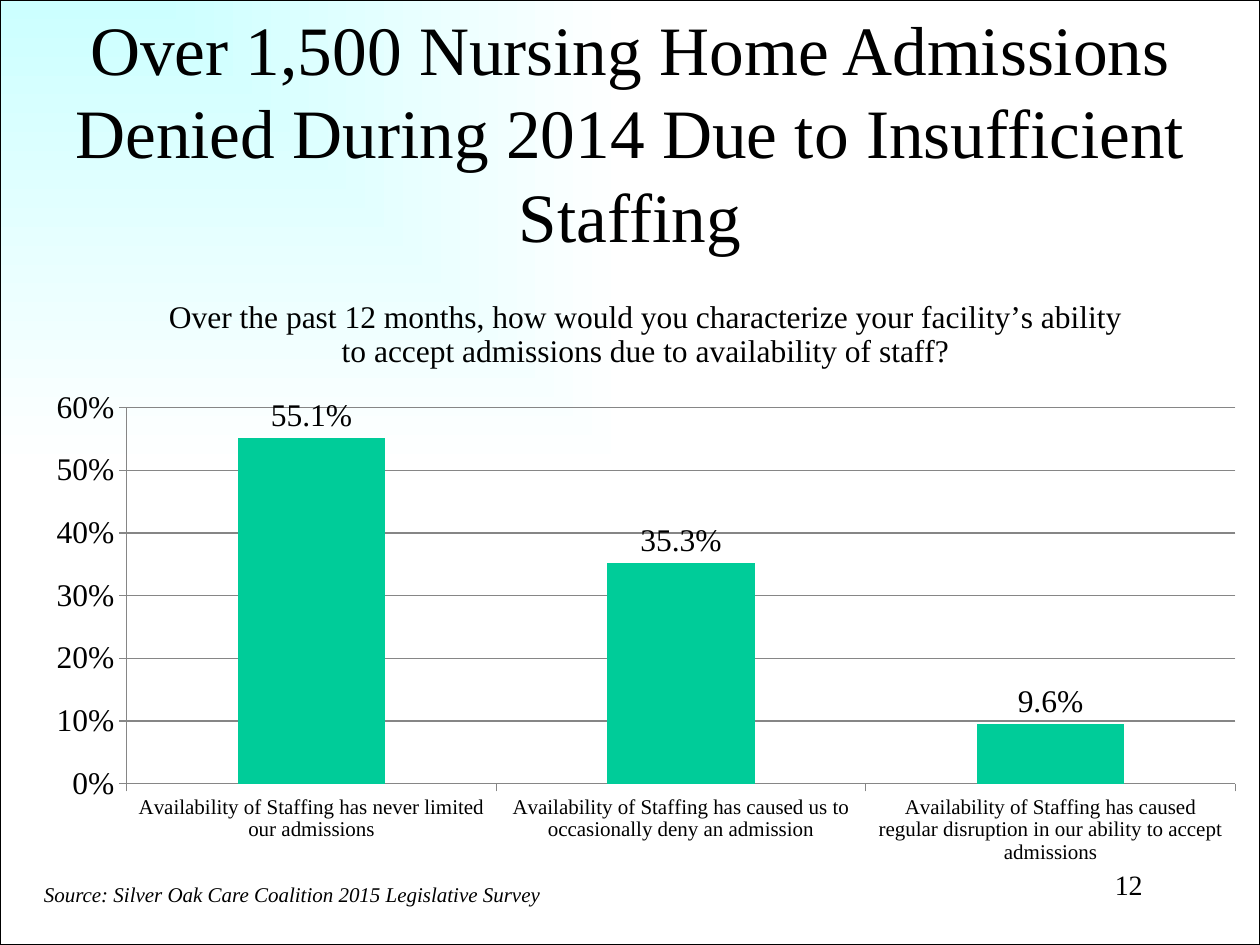
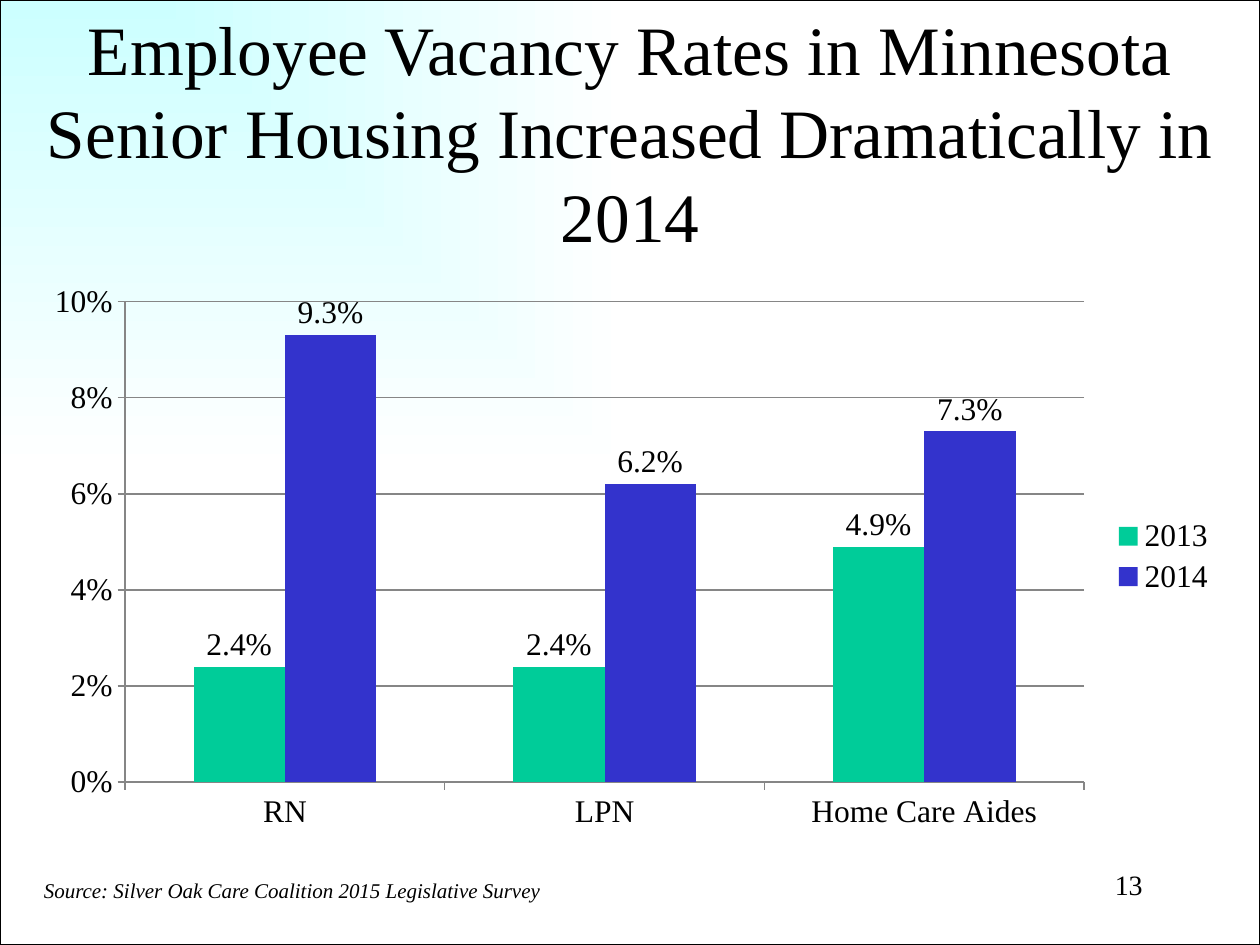
from lxml.etree import SubElement
from pptx import Presentation
from pptx.chart.data import CategoryChartData
from pptx.dml.color import RGBColor
from pptx.enum.chart import XL_CHART_TYPE, XL_LABEL_POSITION, XL_LEGEND_POSITION, XL_TICK_MARK
from pptx.enum.shapes import MSO_SHAPE
from pptx.enum.text import MSO_ANCHOR, MSO_AUTO_SIZE, PP_ALIGN
from pptx.oxml.ns import qn
from pptx.util import Pt

WIDTH, HEIGHT = 720, 540
FONT = "Times New Roman"
COLORS = {
    "text": "000000",
    "glow": "CCFFFF",
    "page": "FFFFFF",
    "grid": "868686",
    "green": "00CC99",
    "blue": "3333CC",
}
SOURCE = "Source: Silver Oak Care Coalition 2015 Legislative Survey"

# Boxes are left, top, width, height in points
TITLE_BOX = (18, 30, 684, 90)
NUMBER_BOX = (624, 492, 42, 24)

SLIDES = [
    {
        "title": "Over 1,500 Nursing Home Admissions Denied During 2014 "
                 "Due to Insufficient Staffing",
        "number": "12",
        "source_box": (18, 500, 308, 21.6),
        "chart_box": (18, 156, 702, 344),
        "plot_box": (54.5, 77, 633.5, 215),
        "question": "Over the past 12 months, how would you characterize your facility’s "
                    "ability to accept admissions due to availability of staff?",
        "categories": [
            "Availability of Staffing has never limited our admissions",
            "Availability of Staffing has caused us to occasionally deny an admission",
            "Availability of Staffing has caused regular disruption in our ability "
            "to accept admissions",
        ],
        "series": [("Series 1", (0.551, 0.353, 0.096), "green")],
        "category_size": 12,
        "scale": (0.6, 0.1),
    },
    {
        "title": "Employee Vacancy Rates in Minnesota Senior Housing "
                 "Increased Dramatically in 2014",
        "number": "13",
        "source_box": (18, 498, 319, 21.6),
        "chart_box": (18, 156, 684, 324),
        "plot_box": (53.5, 16.5, 548, 274.5),
        "question": None,
        "categories": ["RN", "LPN", "Home Care Aides"],
        "series": [
            ("2013", (0.024, 0.024, 0.049), "green"),
            ("2014", (0.093, 0.062, 0.073), "blue"),
        ],
        "category_size": 18,
        "scale": (0.1, 0.02),
    },
]


def color(name):
    return RGBColor.from_string(COLORS[name])


def points(box):
    return [Pt(length) for length in box]


def style_font(font, size, italic=False):
    font.name = FONT
    font.size = Pt(size)
    font.bold = False
    font.italic = italic
    font.color.rgb = color("text")


def add_backdrop(slide):
    """Draw the corner glow and hand it to the layout that the slides share."""
    shape = slide.shapes.add_shape(MSO_SHAPE.RECTANGLE, *points((0, 0, WIDTH, HEIGHT)))
    shape.shadow.inherit = False
    shape.line.color.rgb = color("text")
    shape.line.width = Pt(0.75)
    shape.fill.gradient()
    for stop, name in zip(shape.fill.gradient_stops, ("glow", "page")):
        stop.color.rgb = color(name)
    # Spread the gradient from the top left corner
    gradient = shape._element.spPr.find(qn("a:gradFill"))
    gradient.remove(gradient.find(qn("a:lin")))
    spread = SubElement(gradient, qn("a:path"), {"path": "rect"})
    SubElement(spread, qn("a:fillToRect"), {"r": "100000", "b": "100000"})
    slide.slide_layout.shapes._spTree.insert(2, shape._element)


def place_title(slide, box, text):
    title = slide.shapes.title
    title.left, title.top, title.width, title.height = points(box)
    text_frame = title.text_frame
    text_frame.text = text
    text_frame.auto_size = MSO_AUTO_SIZE.NONE
    text_frame.vertical_anchor = MSO_ANCHOR.MIDDLE
    paragraph = text_frame.paragraphs[0]
    paragraph.alignment = PP_ALIGN.CENTER
    style_font(paragraph.runs[0].font, 39.6)


def add_text(slide, box, text, size, alignment=PP_ALIGN.LEFT, italic=False, wrap=True):
    text_frame = slide.shapes.add_textbox(*points(box)).text_frame
    text_frame.word_wrap = wrap
    text_frame.text = text
    paragraph = text_frame.paragraphs[0]
    paragraph.alignment = alignment
    style_font(paragraph.runs[0].font, size, italic)


def place_plot(chart, box, chart_box):
    """Fix the inner plot area, given relative to the chart's box."""
    plot_area = chart._chartSpace.chart.plotArea
    for layout in plot_area.findall(qn("c:layout")):
        plot_area.remove(layout)
    layout = SubElement(plot_area, qn("c:layout"))
    plot_area.insert(0, layout)
    manual = SubElement(layout, qn("c:manualLayout"))
    settings = [("layoutTarget", "inner"), ("xMode", "edge"), ("yMode", "edge")]
    for tag, length, whole in zip("xywh", box, chart_box[2:] * 2):
        settings.append((tag, f"{length / whole:.4f}"))
    for tag, value in settings:
        SubElement(manual, qn(f"c:{tag}"), {"val": value})


def style_axes(chart, category_size, scale):
    for axis, size in ((chart.category_axis, category_size), (chart.value_axis, 18)):
        axis.major_tick_mark = XL_TICK_MARK.OUTSIDE
        axis.minor_tick_mark = XL_TICK_MARK.NONE
        axis.format.line.color.rgb = color("grid")
        style_font(axis.tick_labels.font, size)
    value_axis = chart.value_axis
    value_axis.minimum_scale = 0
    value_axis.maximum_scale, value_axis.major_unit = scale
    value_axis.tick_labels.number_format = "0%"
    value_axis.tick_labels.number_format_is_linked = False
    value_axis.has_major_gridlines = True
    value_axis.major_gridlines.format.line.color.rgb = color("grid")


def add_column_chart(slide, content):
    chart_data = CategoryChartData(number_format="0.0%")
    chart_data.categories = content["categories"]
    for name, values, _ in content["series"]:
        chart_data.add_series(name, values)
    chart = slide.shapes.add_chart(
        XL_CHART_TYPE.COLUMN_CLUSTERED, *points(content["chart_box"]), chart_data
    ).chart
    style_font(chart.font, 18)

    # Question above the columns
    chart.has_title = content["question"] is not None
    if chart.has_title:
        text_frame = chart.chart_title.text_frame
        text_frame.text = content["question"]
        style_font(text_frame.paragraphs[0].runs[0].font, 18)

    # Legend only where there are series to tell apart
    chart.has_legend = len(content["series"]) > 1
    if chart.has_legend:
        chart.legend.position = XL_LEGEND_POSITION.RIGHT
        chart.legend.include_in_layout = False
        style_font(chart.legend.font, 18)

    # Columns and their value labels
    plot = chart.plots[0]
    plot.gap_width = 150
    plot.overlap = 0
    plot.vary_by_categories = False
    for series, (_, _, fill_name) in zip(plot.series, content["series"]):
        series.format.fill.solid()
        series.format.fill.fore_color.rgb = color(fill_name)
        labels = series.data_labels
        labels.show_value = True
        labels.number_format = "0.0%"
        labels.number_format_is_linked = False
        labels.position = XL_LABEL_POSITION.OUTSIDE_END
        style_font(labels.font, 18)

    style_axes(chart, content["category_size"], content["scale"])
    place_plot(chart, content["plot_box"], content["chart_box"])


def add_chart_slide(presentation, layout, content):
    slide = presentation.slides.add_slide(layout)
    place_title(slide, TITLE_BOX, content["title"])
    add_column_chart(slide, content)
    add_text(slide, NUMBER_BOX, content["number"], 16, PP_ALIGN.CENTER)
    add_text(slide, content["source_box"], SOURCE, 12, italic=True, wrap=False)
    return slide


def main():
    presentation = Presentation()
    presentation.slide_width, presentation.slide_height = Pt(WIDTH), Pt(HEIGHT)
    title_only = presentation.slide_layouts[5]
    slides = [add_chart_slide(presentation, title_only, content) for content in SLIDES]
    add_backdrop(slides[0])
    presentation.save("out.pptx")


if __name__ == "__main__":
    main()
